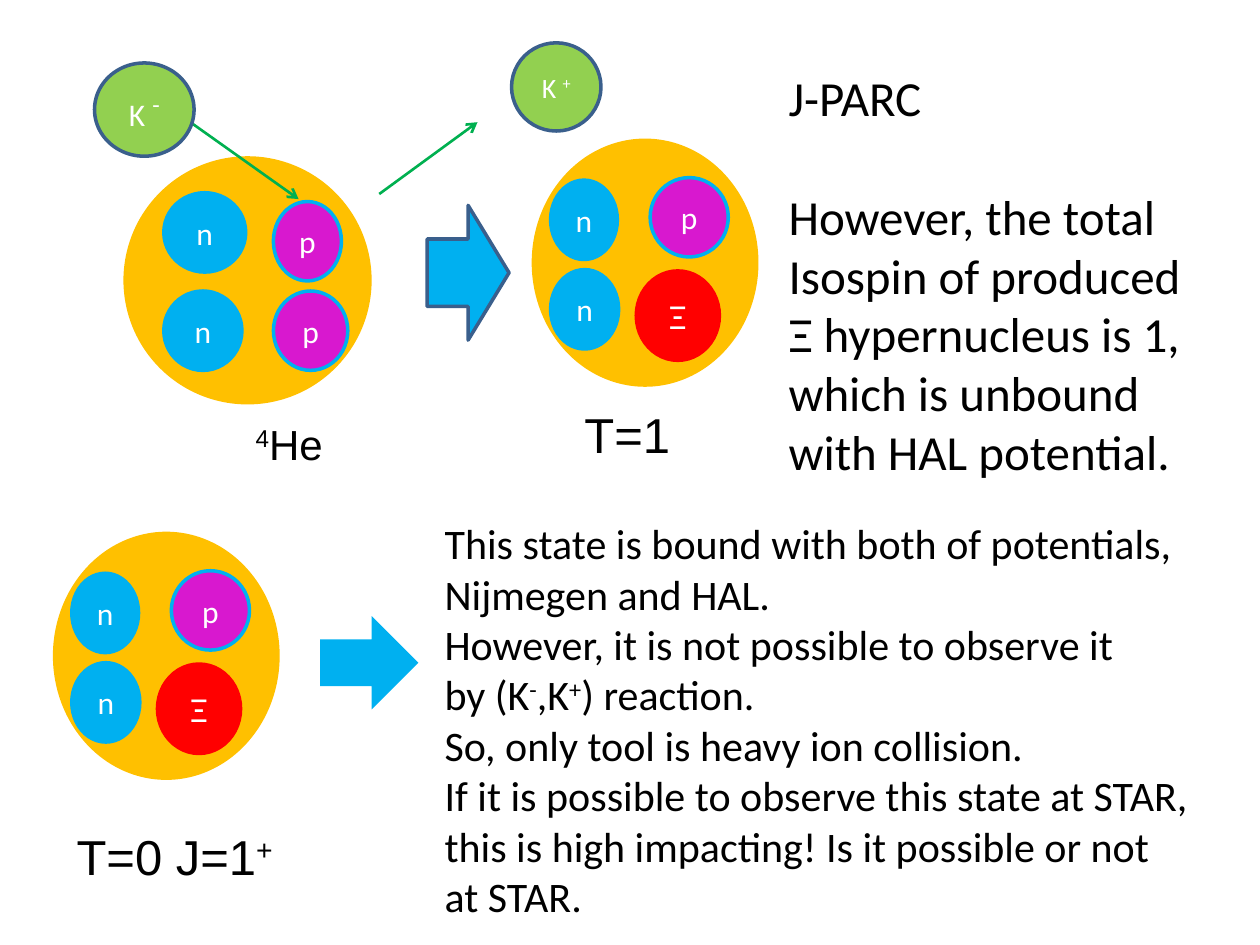
import pptx
import pptx.dml.color
import pptx.enum.shapes
import pptx.enum.text
import pptx.oxml
import pptx.oxml.ns
import pptx.util

RGBColor = pptx.dml.color.RGBColor
SHAPE = pptx.enum.shapes.MSO_SHAPE
ALIGN = pptx.enum.text.PP_ALIGN

WHITE = RGBColor(0xFF, 0xFF, 0xFF)
BLACK = RGBColor(0x00, 0x00, 0x00)
ORANGE = RGBColor(0xFF, 0xC0, 0x00)
BLUE = RGBColor(0x00, 0xB0, 0xF0)
NAVY = RGBColor(0x3A, 0x5F, 0x8C)
RED = RGBColor(0xFF, 0x00, 0x00)
MAGENTA = RGBColor(0xD8, 0x18, 0xCF)
LIME = RGBColor(0x92, 0xD0, 0x50)
GREEN = RGBColor(0x00, 0xB0, 0x50)

SLIDE_WIDTH = pptx.util.Inches(10)
SLIDE_HEIGHT = pptx.util.Inches(7.5)
COLUMN = SLIDE_WIDTH // 1000
ROW = SLIDE_HEIGHT // 750

PARTICLES = {
    "n": (BLUE, BLUE, 18),
    "p": (MAGENTA, BLUE, 18),
    "Ξ": (RED, RED, 20),
}

HELIUM = [
    ("n", 32, 29, 65, 63),
    ("p", 119, 36, 54, 63),
    ("p", 119, 107, 59, 63),
    ("n", 32, 107, 62, 63),
]
HYPERNUCLEUS = [
    ("n", 15, 33, 53, 63),
    ("Ξ", 83, 105, 66, 71),
    ("p", 94, 31, 62, 63),
    ("n", 15, 104, 54, 63),
]

ISOSPIN_NOTE = [
    "J-PARC",
    "However, the total",
    "Isospin of produced",
    "Ξ hypernucleus is 1,",
    "which is unbound",
    "with HAL potential.",
]
STAR_NOTE = [
    "This state is bound with both of potentials,",
    "Nijmegen and HAL.",
    "However, it is not possible to observe it",
    "by (K^-^,K^+^) reaction.",
    "So, only tool is heavy ion collision.",
    "If it is possible to observe this state at STAR,",
    "this is high impacting! Is it possible or not",
    "at STAR.",
]


def place(left, top, width, height):
    return left * COLUMN, top * ROW, width * COLUMN, height * ROW


def write(para, text, size, color, face="Calibri", raised_size=None):
    para.font.size = pptx.util.Pt(size)
    para.font.name = face
    para.font.color.rgb = color
    for index, part in enumerate(text.split("^")):
        if not part:
            continue
        span = para.add_run()
        span.text = part
        if index % 2:
            span._r.get_or_add_rPr().set("baseline", "30000")
            if raised_size:
                span.font.size = pptx.util.Pt(raised_size)


def add_figure(page, kind, spot, fill, outline=None):
    figure = page.shapes.add_shape(kind, *place(*spot))
    figure.shadow.inherit = False
    figure.fill.solid()
    figure.fill.fore_color.rgb = fill
    if outline is None:
        figure.line.fill.background()
    else:
        figure.line.color.rgb = outline
        figure.line.width = pptx.util.Pt(2)
    return figure


def add_particle(page, text, spot, fill, outline, size, raised_size=None):
    ball = add_figure(page, SHAPE.OVAL, spot, fill, outline)
    ball.text_frame.vertical_anchor = pptx.enum.text.MSO_ANCHOR.MIDDLE
    para = ball.text_frame.paragraphs[0]
    para.alignment = ALIGN.CENTER
    write(para, text, size, WHITE, raised_size=raised_size)


def add_nucleus(page, spot, members):
    add_figure(page, SHAPE.OVAL, spot, ORANGE)
    left, top = spot[:2]
    for name, across, down, width, height in members:
        add_particle(page, name, (left + across, top + down, width, height), *PARTICLES[name])


def add_path(page, start, end):
    path = page.shapes.add_connector(
        pptx.enum.shapes.MSO_CONNECTOR.STRAIGHT,
        start[0] * COLUMN, start[1] * ROW, end[0] * COLUMN, end[1] * ROW,
    )
    path.line.color.rgb = GREEN
    path.line.width = pptx.util.Pt(1.5)
    head = pptx.oxml.parse_xml(f'<a:tailEnd {pptx.oxml.ns.nsdecls("a")} type="arrow"/>')
    path.line._get_or_add_ln().append(head)
    effects = pptx.oxml.parse_xml(f'<a:effectLst {pptx.oxml.ns.nsdecls("a")}/>')
    path._element.spPr.append(effects)


def add_text(page, spot, lines, size, face):
    box = page.shapes.add_textbox(*place(*spot))
    frame = box.text_frame
    frame.word_wrap = False
    for index, line in enumerate(lines):
        para = frame.add_paragraph() if index else frame.paragraphs[0]
        para.alignment = ALIGN.LEFT
        write(para, line, size, BLACK, face)
    return box


def main():
    deck = pptx.Presentation()
    deck.slide_width = SLIDE_WIDTH
    deck.slide_height = SLIDE_HEIGHT
    page = deck.slides.add_slide(deck.slide_layouts[6])

    add_nucleus(page, (98, 124, 197, 197), HELIUM)
    add_nucleus(page, (422, 110, 180, 197), HYPERNUCLEUS)
    add_nucleus(page, (42, 422, 180, 197), HYPERNUCLEUS)

    add_path(page, (137, 87), (237, 158))
    add_path(page, (301, 154), (379, 97))
    add_particle(page, "K ^-", (75, 50, 79, 74), LIME, NAVY, 18, raised_size=24)
    add_particle(page, "K ^+", (406, 34, 71, 70), LIME, NAVY, 16)

    add_figure(page, SHAPE.RIGHT_ARROW, (339, 163, 65, 107), BLUE, NAVY)
    add_figure(page, SHAPE.RIGHT_ARROW, (254, 489, 78, 74), BLUE)

    add_text(page, (193, 327, 76, 51), ["^4^He"], 24, "Arial")
    add_text(page, (454, 316, 89, 57), ["T=1"], 28, "Arial")
    add_text(page, (51, 651, 180, 57), ["T=0 J=1^+"], 28, "Arial")

    isospin = add_text(page, (616, 49, 335, 387), ISOSPIN_NOTE, 28, "Calibri")
    isospin.text_frame.paragraphs[0].space_after = pptx.util.Pt(34)
    add_text(page, (343, 406, 615, 414), STAR_NOTE, 24, "Calibri")

    deck.save("out.pptx")


if __name__ == "__main__":
    main()
